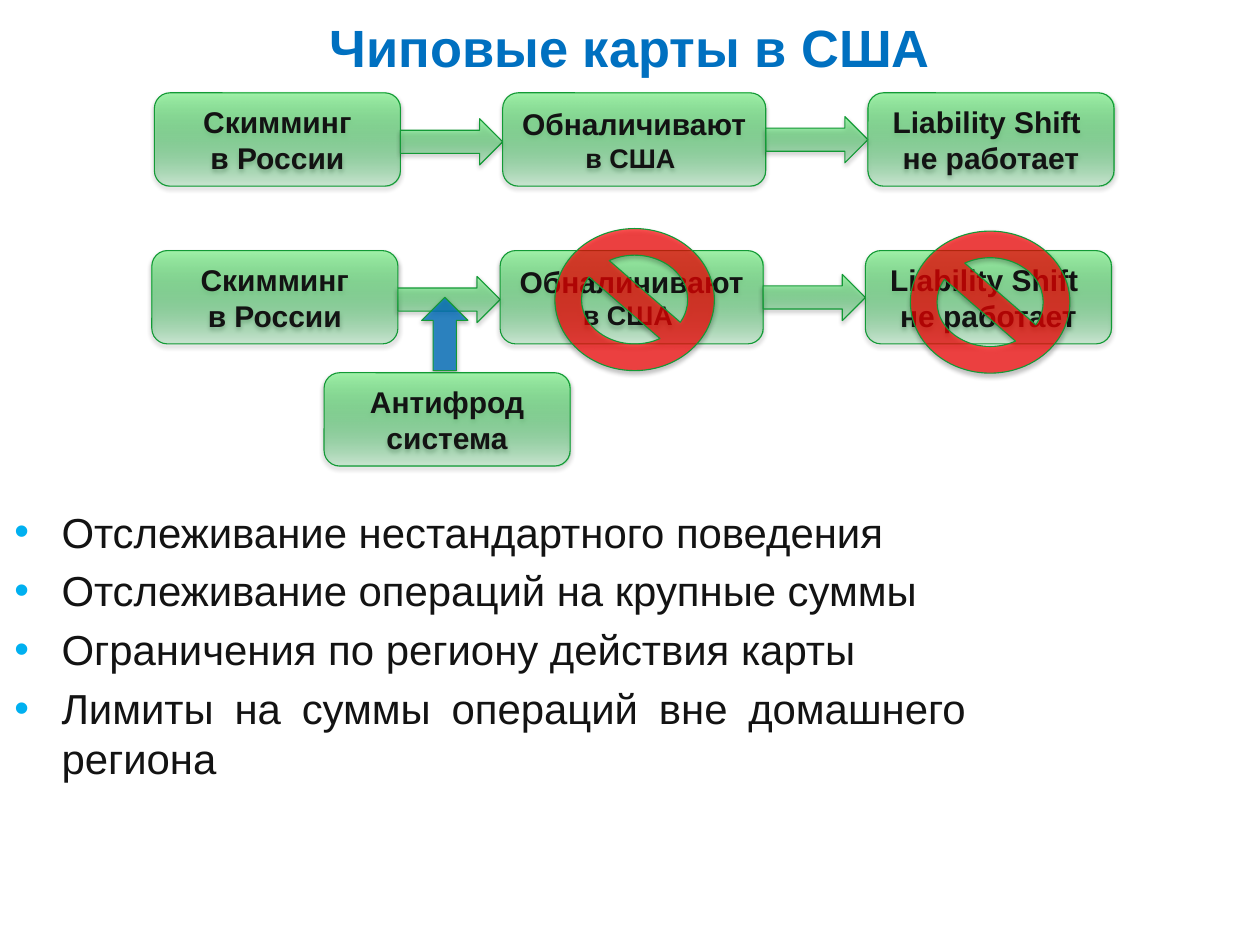
from lxml.etree import SubElement
from pptx import Presentation
from pptx.dml.color import RGBColor
from pptx.enum.shapes import MSO_SHAPE
from pptx.enum.text import MSO_ANCHOR, MSO_AUTO_SIZE, PP_ALIGN
from pptx.oxml.ns import qn
from pptx.util import Cm, Pt

BLUE = RGBColor(0x00, 0x70, 0xC0)
SKY = RGBColor(0x00, 0xB0, 0xF0)
INK = RGBColor(0x13, 0x13, 0x13)
RED = RGBColor(0xFF, 0x00, 0x00)
EDGE = RGBColor(0x13, 0x9A, 0x36)
GREEN = RGBColor(0x03, 0xAE, 0x30)
MINT = RGBColor(0xA0, 0xF2, 0xA8)
BLACK = RGBColor(0, 0, 0)

# Each label is a list of paragraphs, each paragraph a list of (words, size).
HARD = chr(160)  # no-break space, keeps "в России" on one line
SKIM = [[(f"Скимминг в{HARD}России", 20)]]
CASH = [[("Обналичивают", 20), (" в США ", 18)]]
SHIFT = [[("Liability Shift ", 20)], [("не работает", 20)]]
GUARD = [[("Антифрод", 20)], [("система", 20)]]
CHAIN = [(SKIM, 5.8), (CASH, 6.2), (SHIFT, 5.8)]
RULES = [
    "Отслеживание нестандартного поведения ",
    "Отслеживание операций на крупные суммы",
    "Ограничения по региону действия карты",
    "Лимиты на суммы операций вне домашнего региона",
]
HIGH, GAP, HEAD = 2.2, 2.41, 1.09


def fade(color, share):
    """Give a colour element an opacity in percent."""
    SubElement(color, qn("a:alpha"), val=str(share * 1000))


def add_bullet(para):
    props = para._p.get_or_add_pPr()
    props.set("marL", str(Cm(1.11)))
    props.set("indent", str(-Cm(1.11)))
    tint = SubElement(props, qn("a:buClr"))
    SubElement(tint, qn("a:srgbClr"), val=str(SKY))
    SubElement(props, qn("a:buFont"), typeface="Arial")
    SubElement(props, qn("a:buChar"), char="•")


def write(frame, paras, color=INK, bold=False, align=PP_ALIGN.CENTER,
          anchor=MSO_ANCHOR.MIDDLE, bullet=False, before=0):
    frame.word_wrap = True
    frame.auto_size = MSO_AUTO_SIZE.NONE
    frame.vertical_anchor = anchor
    for i, runs in enumerate(paras):
        para = frame.add_paragraph() if i else frame.paragraphs[0]
        if bullet:
            add_bullet(para)
        para.alignment = align
        para.space_before = Pt(before if i else 0)
        for words, size in runs:
            run = para.add_run()
            run.text = words
            font = run.font
            font.name, font.size, font.bold = "Arial", Pt(size), bold
            font.color.rgb = color


class Board:
    def __init__(self, deck):
        self.slide = deck.slides.add_slide(deck.slide_layouts[1])

    def fill_holder(self, index, x, y, w, h, paras, **style):
        holder = self.slide.placeholders[index]
        holder.left, holder.top = Cm(x), Cm(y)
        holder.width, holder.height = Cm(w), Cm(h)
        frame = holder.text_frame
        frame.margin_left = frame.margin_right = Cm(0.3)
        frame.margin_top = frame.margin_bottom = Cm(0.15)
        write(frame, paras, **style)

    def shape(self, kind, x, y, w, h, color=None, share=100):
        """Add a shape, with the green gradient unless a colour is given."""
        shape = self.slide.shapes.add_shape(kind, Cm(x), Cm(y), Cm(w), Cm(h))
        fill = shape.fill
        props = shape._element.spPr
        if color is None:
            fill.gradient()
            fill.gradient_angle = 90
            for stop, tone in zip(fill.gradient_stops, (GREEN, MINT)):
                stop.color.rgb = tone
            fade(props.find(".//" + qn("a:srgbClr")), 15)
        else:
            fill.solid()
            fill.fore_color.rgb = color
            fade(props.find(".//" + qn("a:srgbClr")), share)
        shape.line.color.rgb = EDGE
        shape.line.width = Pt(0.75)
        shape.shadow.inherit = False
        shade = SubElement(
            props.find(qn("a:effectLst")), qn("a:outerShdw"),
            blurRad=str(Pt(3.1)), dist=str(Pt(1.8)), dir="5400000",
            rotWithShape="0")
        fade(SubElement(shade, qn("a:srgbClr"), val=str(BLACK)), 35)
        return shape

    def box(self, x, y, w, label):
        shape = self.shape(MSO_SHAPE.ROUNDED_RECTANGLE, x, y, w, HIGH)
        write(shape.text_frame, label, bold=True)

    def arrow(self, x, y, w=GAP, **style):
        return self.shape(MSO_SHAPE.RIGHT_ARROW, x, y, w, HEAD, **style)

    def chain(self, x, y):
        """Lay out the boxes of one row with an arrow in each gap."""
        drops = (0.61, 0.56)
        for i, (label, w) in enumerate(CHAIN):
            self.box(x, y, w, label)
            x += w
            if i < len(drops):
                self.arrow(x, y + drops[i])
                x += GAP

    def ban(self, x, y):
        self.shape(MSO_SHAPE.NO_SYMBOL, x, y, 3.76, 3.35, RED, 67)


def main():
    deck = Presentation()
    deck.slide_width, deck.slide_height = Cm(29.7), Cm(22)
    board = Board(deck)
    board.fill_holder(0, 0, 0, 29.7, 2.18, [[("Чиповые карты в США", 35)]],
                      color=BLUE, bold=True)
    board.fill_holder(1, 0.04, 11.79, 23.02, 7.39,
                      [[(rule, 28)] for rule in RULES],
                      align=PP_ALIGN.JUSTIFY, anchor=MSO_ANCHOR.TOP,
                      bullet=True, before=5.6)
    board.chain(3.64, 2.19)
    board.chain(3.58, 5.91)
    board.ban(13.08, 5.39)
    rise = board.arrow(9.62, 7.33, 1.73, color=BLUE, share=77)
    rise.rotation = 270
    board.box(7.64, 8.79, 5.8, GUARD)
    board.ban(21.46, 5.45)
    deck.save("out.pptx")


if __name__ == "__main__":
    main()
